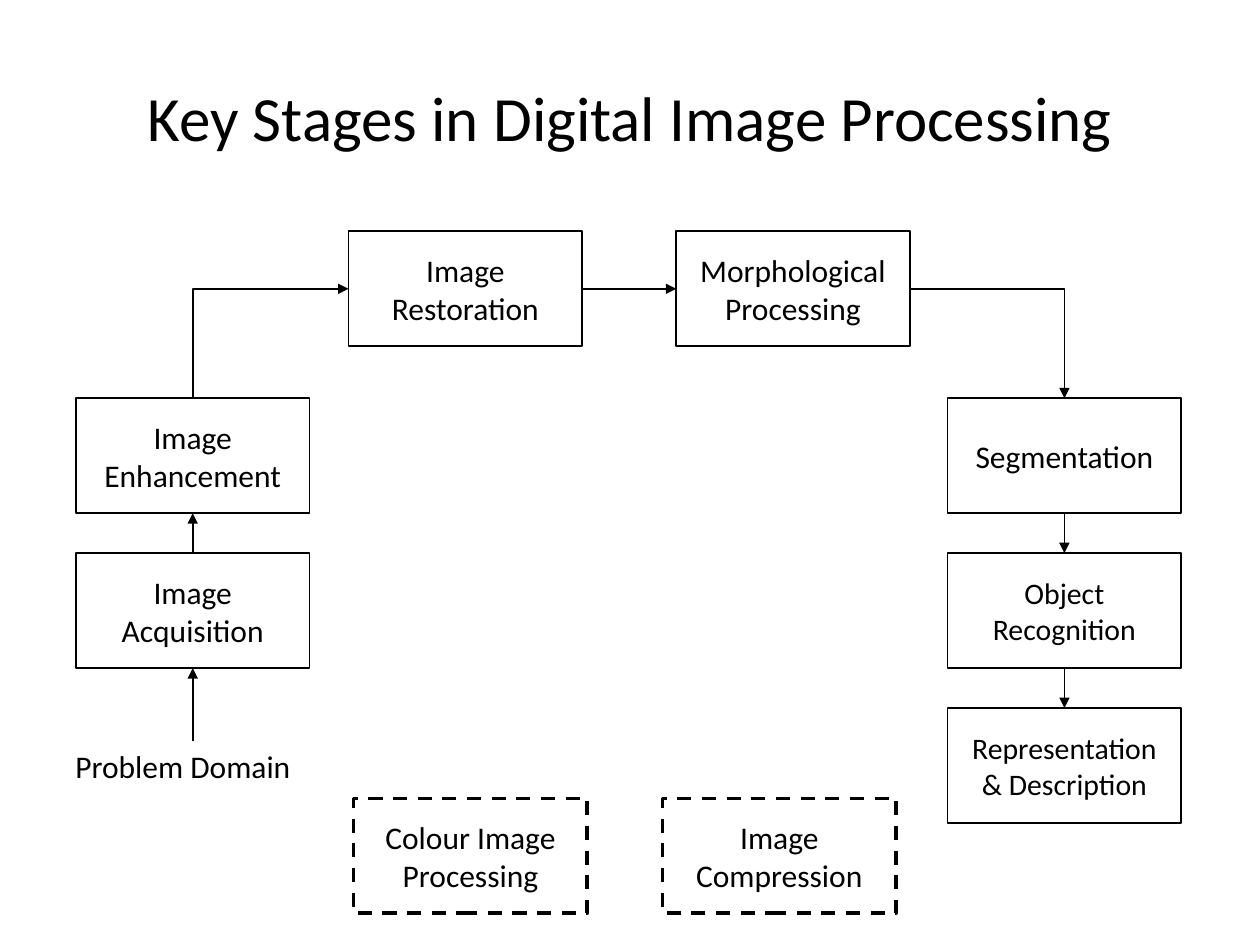
from lxml import etree
from pptx import Presentation
from pptx.dml.color import RGBColor
from pptx.enum import dml, shapes, text
from pptx.oxml.ns import qn
from pptx.util import Pt

BLACK = RGBColor(0, 0, 0)
WHITE = RGBColor(255, 255, 255)
FONT = "Calibri"

BOX_W, BOX_H = 133.5, 65.7
LEFT, RIGHT = 43.4, 541.5
TOP_ROW, BOTTOM_ROW = 132.2, 456.2
SIDE_TOP, SIDE_STEP = 227.6, 88.5
SIDE_ROWS = [SIDE_TOP + SIDE_STEP * i for i in range(3)]

# label, left, top, font size
STAGES = [
    ("Image Acquisition", LEFT, SIDE_ROWS[1], 18),
    ("Image Enhancement", LEFT, SIDE_ROWS[0], 18),
    ("Image Restoration", 199.2, TOP_ROW, 18),
    ("Morphological Processing", 386.4, TOP_ROW, 18),
    ("Segmentation", RIGHT, SIDE_ROWS[0], 18),
    ("Object Recognition", RIGHT, SIDE_ROWS[1], 17),
    ("Representation & Description", RIGHT, SIDE_ROWS[2], 17),
]
SUPPORTING = [
    ("Colour Image Processing", 202.1, BOTTOM_ROW, 18),
    ("Image Compression", 378.6, BOTTOM_ROW, 18),
]

# Connection sites of a rectangle
SITE_TOP, SITE_LEFT, SITE_BOTTOM, SITE_RIGHT = range(4)
# Exit and entry site of the arrow between each stage and the next
FLOW = [
    (SITE_TOP, SITE_BOTTOM),
    (SITE_TOP, SITE_LEFT),
    (SITE_RIGHT, SITE_LEFT),
    (SITE_RIGHT, SITE_TOP),
    (SITE_BOTTOM, SITE_TOP),
    (SITE_BOTTOM, SITE_TOP),
]


def write(shape, words, size, align, anchor, wrap=True):
    frame = shape.text_frame
    frame.word_wrap = wrap
    frame.vertical_anchor = anchor
    para = frame.paragraphs[0]
    para.text = words
    para.alignment = align
    para.font.name = FONT
    para.font.size = Pt(size)
    para.font.color.rgb = BLACK


def add_box(page, label, left, top, size, line_width=1, dash=None):
    box = page.shapes.add_shape(shapes.MSO_SHAPE.RECTANGLE, Pt(left), Pt(top),
                                Pt(BOX_W), Pt(BOX_H))
    box.shadow.inherit = False
    box.fill.solid()
    box.fill.fore_color.rgb = WHITE
    box.line.color.rgb = BLACK
    box.line.width = Pt(line_width)
    if dash:
        box.line.dash_style = dash
    write(box, label, size, text.PP_ALIGN.CENTER, text.MSO_ANCHOR.MIDDLE)
    return box


def add_arrow(page, kind=shapes.MSO_CONNECTOR.STRAIGHT, start=(0, 0), end=(0, 0)):
    arrow = page.shapes.add_connector(kind, *(Pt(v) for v in (*start, *end)))
    arrow.line.color.rgb = BLACK
    arrow.line.width = Pt(1)
    properties = arrow.line._get_or_add_ln()
    etree.SubElement(properties, qn("a:tailEnd"), type="triangle")
    etree.SubElement(arrow._element.spPr, qn("a:effectLst"))
    return arrow


def make_single_bend(arrow, upward):
    """Give an elbow one corner; an upward one leaves its start vertically."""
    spPr = arrow._element.spPr
    spPr.find(qn("a:prstGeom")).set("prst", "bentConnector2")
    if upward:
        left, top, width, height = arrow.left, arrow.top, arrow.width, arrow.height
        frame = spPr.find(qn("a:xfrm"))
        frame.attrib.pop("flipV", None)
        frame.set("rot", str(270 * 60000))
        arrow.left = left + (width - height) // 2
        arrow.top = top + (height - width) // 2
        arrow.width, arrow.height = height, width


def link(page, first, first_site, second, second_site):
    bent = first_site % 2 != second_site % 2
    kind = shapes.MSO_CONNECTOR.ELBOW if bent else shapes.MSO_CONNECTOR.STRAIGHT
    arrow = add_arrow(page, kind)
    arrow.begin_connect(first, first_site)
    arrow.end_connect(second, second_site)
    if bent:
        make_single_bend(arrow, first_site == SITE_TOP)


def main():
    deck = Presentation()
    deck.slide_width, deck.slide_height = Pt(720), Pt(540)
    page = deck.slides.add_slide(deck.slide_layouts[6])

    title = page.shapes.add_textbox(Pt(36), Pt(21.6), Pt(648), Pt(90))
    write(title, "Key Stages in Digital Image Processing", 36,
          text.PP_ALIGN.CENTER, text.MSO_ANCHOR.MIDDLE)

    boxes = [add_box(page, *stage) for stage in STAGES]
    for first, second, (leave, enter) in zip(boxes, boxes[1:], FLOW):
        link(page, first, leave, second, enter)

    source_top = 423.2
    source = page.shapes.add_textbox(Pt(36), Pt(source_top), Pt(148), Pt(29))
    write(source, "Problem Domain", 18, text.PP_ALIGN.LEFT, text.MSO_ANCHOR.TOP,
          wrap=False)
    middle = LEFT + BOX_W / 2
    arrow = add_arrow(page, start=(middle, source_top),
                      end=(middle, SIDE_ROWS[1] + BOX_H))
    arrow.end_connect(boxes[0], SITE_BOTTOM)

    for stage in SUPPORTING:
        add_box(page, *stage, line_width=2, dash=dml.MSO_LINE.DASH)

    deck.save("out.pptx")


if __name__ == "__main__":
    main()
